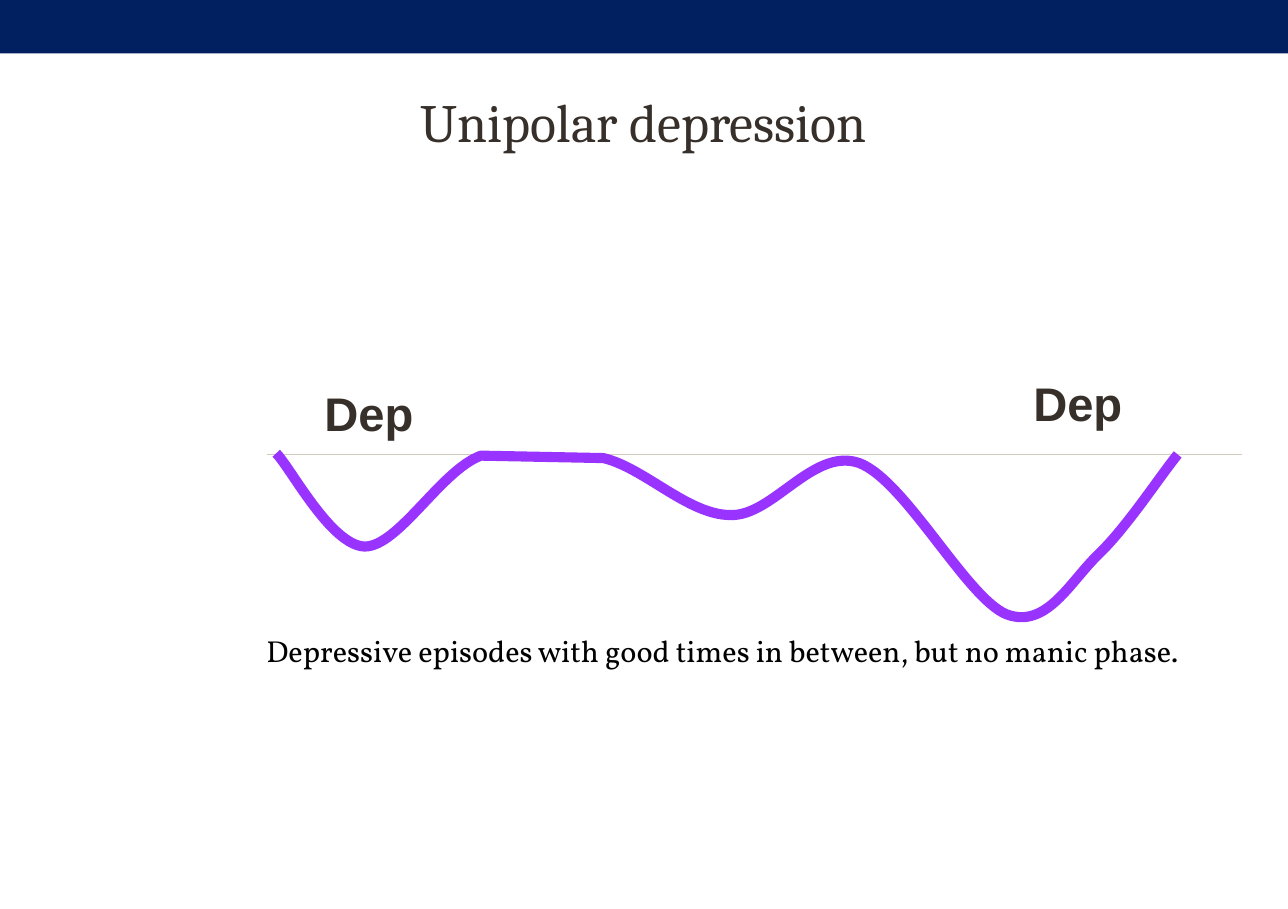
import pptx
import pptx.dml.color
import pptx.enum.shapes
import pptx.enum.text
import pptx.oxml.ns
import pptx.util
from lxml import etree
from pptx.util import Inches

COLORS = {
    "band": "002060",
    "heading": "37302A",
    "baseline": "D0CCB9",
    "mood": "9933FF",
    "caption": "000000",
}

MOOD_START = (2.28, 3.74)
MOOD_SEGMENTS = [
    [(2.4, 3.86), (2.73, 4.5), (3.01, 4.51)],
    [(3.29, 4.51), (3.64, 3.88), (3.97, 3.76)],
    [(4.98, 3.78)],
    [(5.32, 3.86), (5.68, 4.25), (6.03, 4.25)],
    [(6.38, 4.26), (6.71, 3.69), (7.09, 3.82)],
    [(7.47, 3.96), (7.98, 4.94), (8.31, 5.07)],
    [(8.64, 5.19), (8.83, 4.8), (9.07, 4.57)],
    [(9.3, 4.35), (9.58, 3.92), (9.72, 3.75)],
]


class SlideBuilder:
    def __init__(self, slide):
        self.slide = slide
        self.shapes = slide.shapes

    def color(self, name):
        return pptx.dml.color.RGBColor.from_string(COLORS[name])

    def style_text(self, frame, text, font, size, color, bold=False):
        frame.text = text
        run_font = frame.paragraphs[0].runs[0].font
        run_font.name = font
        run_font.size = pptx.util.Pt(size)
        run_font.bold = bold
        run_font.color.rgb = self.color(color)

    def style_line(self, line, color, width):
        line.color.rgb = self.color(color)
        line.width = pptx.util.Pt(width)

    def band(self, left, top, width, height, color):
        band = self.shapes.add_shape(
            pptx.enum.shapes.MSO_SHAPE.RECTANGLE,
            Inches(left), Inches(top), Inches(width), Inches(height),
        )
        band.shadow.inherit = False
        band.fill.solid()
        band.fill.fore_color.rgb = self.color(color)
        band.line.fill.background()
        self.shapes.title._element.addprevious(band._element)

    def title(self, text, left, top, width, height):
        title = self.shapes.title
        title.left, title.top = Inches(left), Inches(top)
        title.width, title.height = Inches(width), Inches(height)
        frame = title.text_frame
        self.style_text(frame, text, "Cambria", 32, "heading")
        frame.auto_size = pptx.enum.text.MSO_AUTO_SIZE.NONE
        frame.vertical_anchor = pptx.enum.text.MSO_ANCHOR.MIDDLE
        frame.paragraphs[0].alignment = pptx.enum.text.PP_ALIGN.CENTER

    def text(self, text, left, top, width, height, font, size, color, bold=False):
        box = self.shapes.add_textbox(
            Inches(left), Inches(top), Inches(width), Inches(height)
        )
        frame = box.text_frame
        frame.word_wrap = True
        frame.auto_size = pptx.enum.text.MSO_AUTO_SIZE.SHAPE_TO_FIT_TEXT
        self.style_text(frame, text, font, size, color, bold)

    def straight_line(self, x1, y1, x2, y2, color, width):
        line = self.shapes.add_connector(
            pptx.enum.shapes.MSO_CONNECTOR.STRAIGHT,
            Inches(x1), Inches(y1), Inches(x2), Inches(y2),
        )
        self.style_line(line.line, color, width)
        properties = line._element.spPr
        etree.SubElement(properties, pptx.oxml.ns.qn("a:effectLst"))

    def curve(self, start, segments, color, width):
        points = [(Inches(x), Inches(y)) for segment in segments for x, y in segment]
        builder = self.shapes.build_freeform(Inches(start[0]), Inches(start[1]))
        builder.add_line_segments(points, close=False)
        curve = builder.convert_to_shape()
        self.bend(curve, segments)
        curve.shadow.inherit = False
        curve.fill.background()
        self.style_line(curve.line, color, width)

    def bend(self, curve, segments):
        qn = pptx.oxml.ns.qn
        steps = iter(list(curve._element.iter(qn("a:lnTo"))))
        for segment in segments:
            controls = [next(steps) for _ in segment]
            if len(controls) == 3:
                bezier = etree.Element(qn("a:cubicBezTo"))
                controls[0].addprevious(bezier)
                for control in controls:
                    bezier.append(control[0])
                    control.getparent().remove(control)


def main():
    deck = pptx.Presentation()
    deck.slide_width, deck.slide_height = Inches(10.63), Inches(7.5)
    builder = SlideBuilder(deck.slides.add_slide(deck.slide_layouts[5]))

    builder.band(0, 0, 10.63, 0.44, "band")
    builder.title("Unipolar depression", 0.53, 0.37, 9.57, 1.26)
    builder.straight_line(2.2, 3.75, 10.25, 3.75, "baseline", 0.75)
    builder.curve(MOOD_START, MOOD_SEGMENTS, "mood", 6)
    for left, top in [(2.58, 3.12), (8.43, 3.04)]:
        builder.text("Dep", left, top, 1.06, 0.57, "Arial", 28, "heading", bold=True)
    builder.text(
        "Depressive episodes with good times in between, but no manic phase.",
        2.1, 5.17, 8.45, 0.4, "Vollkorn", 18, "caption",
    )
    deck.save("out.pptx")


if __name__ == "__main__":
    main()
